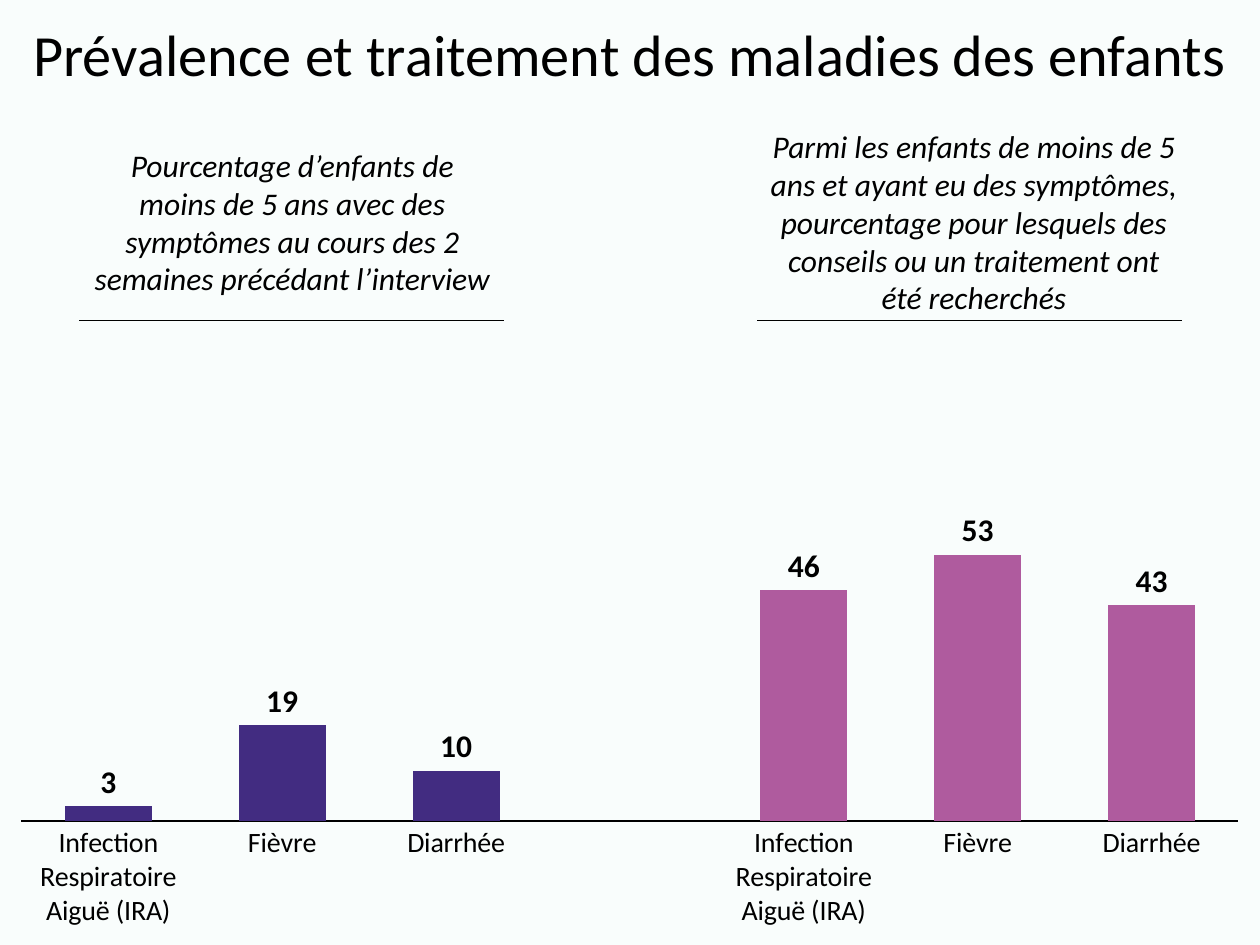
from lxml.etree import SubElement
from pptx import Presentation
from pptx.chart.data import CategoryChartData
from pptx.dml.color import RGBColor
from pptx.enum.chart import XL_CHART_TYPE as ChartType, XL_LABEL_POSITION as LabelPosition
from pptx.enum.chart import XL_TICK_MARK as TickMark
from pptx.enum.shapes import MSO_CONNECTOR as Connector
from pptx.enum.text import MSO_ANCHOR as Anchor, PP_ALIGN as Align
from pptx.oxml.ns import qn
from pptx.util import Inches, Pt


def color(value):
    return RGBColor.from_string(value)


def add_text(text, left, top, width, height, size, italic=False):
    frame = slide.shapes.add_textbox(
        Inches(left), Inches(top), Inches(width), Inches(height)).text_frame
    frame.word_wrap = True
    paragraph = frame.paragraphs[0]
    paragraph.text = text
    paragraph.alignment = Align.CENTER
    paragraph.font.name = "Calibri"
    paragraph.font.size = Pt(size)
    paragraph.font.italic = italic
    paragraph.font.color.rgb = color("000000")
    return frame


prs = Presentation()
prs.slide_width, prs.slide_height = Inches(10), Inches(7.5)
slide = prs.slides.add_slide(prs.slide_layouts[6])
slide.background.fill.solid()
slide.background.fill.fore_color.rgb = color("F9FDFC")

title = add_text("Prévalence et traitement des maladies des enfants", 0, 0, 10, 0.92, 33.3)
title.vertical_anchor = Anchor.MIDDLE
title.paragraphs[0].line_spacing = 0.9

illnesses = ["Infection Respiratoire Aiguë (IRA)", "Fièvre", "Diarrhée"]
prevalence = [3, 19, 10]
treatment = [46, 53, 43]
data = CategoryChartData()
data.categories = illnesses + [""] + illnesses
data.add_series("Series 1", prevalence + [None] + treatment)
chart = slide.shapes.add_chart(
    ChartType.COLUMN_CLUSTERED, Inches(0), Inches(2.53), Inches(10), Inches(4.97), data).chart
chart.has_title = False
chart.has_legend = False
chart.font.name = "Calibri"
chart.font.size = Pt(10)
chart.font.color.rgb = color("000000")

illness_axis = chart.category_axis
illness_axis.major_tick_mark = TickMark.NONE
illness_axis.tick_labels.font.name = "Calibri"
illness_axis.tick_labels.font.size = Pt(16)
illness_axis.tick_labels.font.color.rgb = color("000000")
illness_axis.format.line.color.rgb = color("000000")
illness_axis.format.line.width = Pt(0.75)
percent_axis = chart.value_axis
percent_axis.visible = False
percent_axis.has_major_gridlines = False
percent_axis.minimum_scale = 0
percent_axis.maximum_scale = 100

plot = chart.plots[0]
plot.gap_width = 100
plot.vary_by_categories = False
bars = plot.series[0]
bars.format.fill.solid()
bars.format.fill.fore_color.rgb = color("422C81")
for index in range(len(prevalence) + 1, len(prevalence) + 1 + len(treatment)):
    treatment_fill = bars.points[index].format.fill
    treatment_fill.solid()
    treatment_fill.fore_color.rgb = color("AF5B9E")
labels = bars.data_labels
labels.show_value = True
labels.position = LabelPosition.OUTSIDE_END
labels.font.name = "Calibri"
labels.font.size = Pt(18)
labels.font.bold = True
labels.font.color.rgb = color("000000")

plot_area = chart.element.find(".//" + qn("c:plotArea"))
layout = plot_area.find(qn("c:layout"))
if layout is None:
    layout = SubElement(plot_area, qn("c:layout"))
    plot_area.insert(0, layout)
manual = SubElement(layout, qn("c:manualLayout"))
for tag, value in [("layoutTarget", "inner"), ("xMode", "edge"), ("yMode", "edge"),
                   ("x", "0.017"), ("y", "0"), ("w", "0.966"), ("h", "0.802")]:
    SubElement(manual, qn("c:" + tag)).set("val", value)

add_text("Pourcentage d’enfants de moins de 5 ans avec des symptômes au cours des 2 "
         "semaines précédant l’interview", 0.64, 1.11, 3.36, 1.31, 18, True)
add_text("Parmi les enfants de moins de 5 ans et ayant eu des symptômes, pourcentage pour "
         "lesquels des conseils ou un traitement ont été recherchés",
         6.01, 0.96, 3.44, 1.62, 18, True)

for left in (0.63, 6.01):
    rule = slide.shapes.add_connector(
        Connector.STRAIGHT, Inches(left), Inches(2.54), Inches(left + 3.37), Inches(2.54))
    rule.line.color.rgb = color("000000")
    rule.line.width = Pt(0.5)
    SubElement(rule.element.spPr, qn("a:effectLst"))

prs.save("out.pptx")
